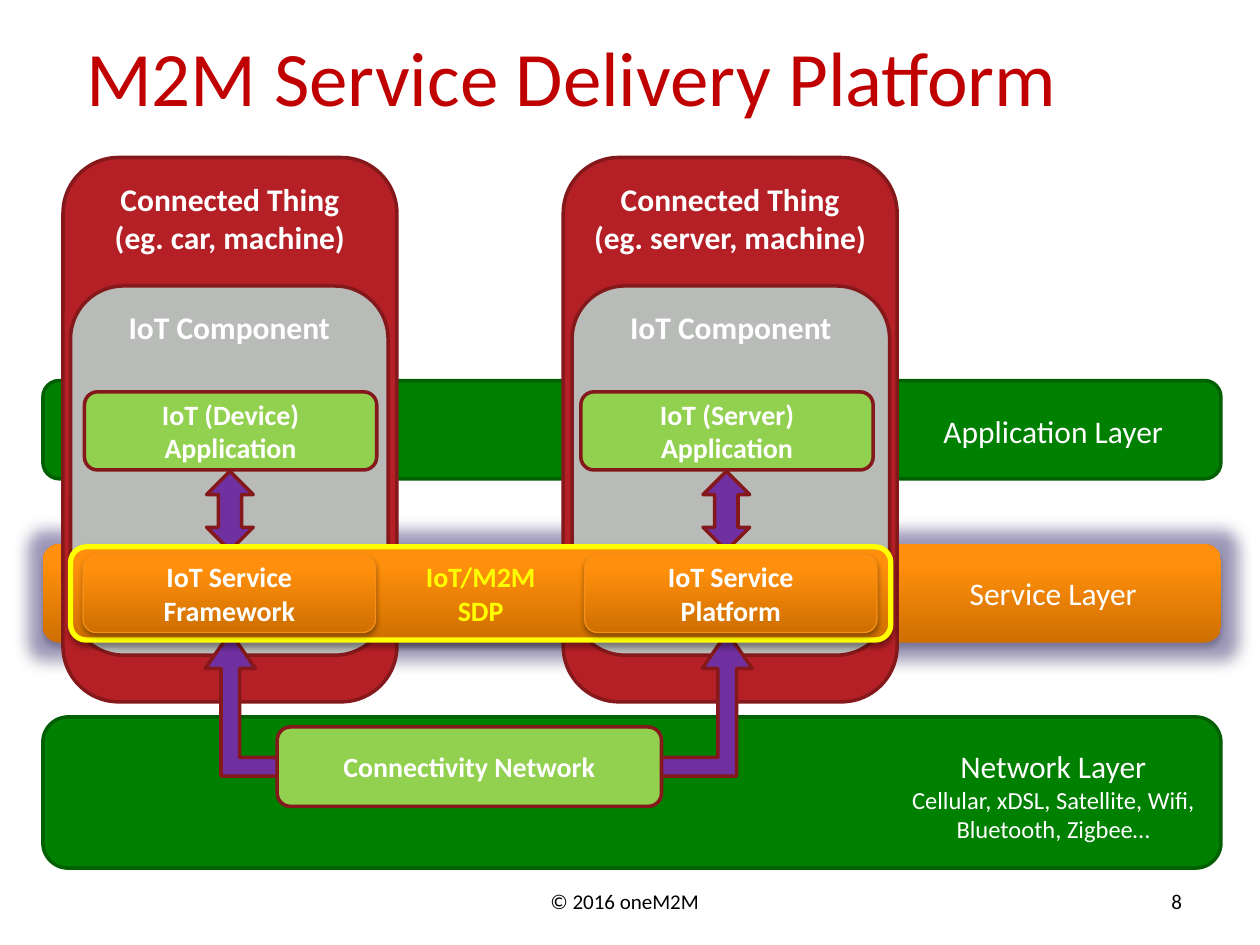
from dataclasses import dataclass

from lxml import etree
from pptx import Presentation
from pptx.dml.color import RGBColor
from pptx.enum.shapes import MSO_SHAPE
from pptx.enum.text import MSO_ANCHOR, PP_ALIGN
from pptx.oxml import parse_xml
from pptx.oxml.ns import nsdecls
from pptx.util import Inches, Pt

ROUNDED = MSO_SHAPE.ROUNDED_RECTANGLE
UP_DOWN = MSO_SHAPE.UP_DOWN_ARROW
BENT_UP = MSO_SHAPE.BENT_UP_ARROW
TOP, MIDDLE = MSO_ANCHOR.TOP, MSO_ANCHOR.MIDDLE
CENTER, LEFT, RIGHT = PP_ALIGN.CENTER, PP_ALIGN.LEFT, PP_ALIGN.RIGHT


@dataclass(frozen=True)
class Theme:
    font: str = "Calibri"
    title: str = "C00000"
    black: str = "000000"
    white: str = "FFFFFF"
    yellow: str = "FFFF00"
    layer: str = "008000"
    layer_edge: str = "005F00"
    thing: str = "B42025"
    edge: str = "85181B"
    component: str = "B8BBB8"
    application: str = "92D050"
    arrow: str = "7030A0"
    orange_dark: str = "CE6F00"
    orange: str = "FF8F0C"
    orange_edge: str = "F68F18"
    glow: str = "3F3080"
    title_size: int = 44
    large: int = 18
    medium: int = 16
    small: int = 14
    footer: int = 12


theme = Theme()


def write(shape, text, size, color=theme.white, bold=False, align=CENTER, anchor=TOP):
    frame = shape.text_frame
    frame.word_wrap = True
    frame.vertical_anchor = anchor
    para = frame.paragraphs[0]
    para.text = text
    para.alignment = align
    para.font.name = theme.font
    para.font.size = Pt(size)
    para.font.bold = bold
    para.font.color.rgb = RGBColor.from_string(color)
    return para


def add_block(kind, left, top, width, height, fill, edge=None, weight=2, glow=False):
    """Add a shape; without a plain fill it gets the orange gradient and a shadow."""
    shape = page.shapes.add_shape(
        kind, Inches(left), Inches(top), Inches(width), Inches(height))
    shape.shadow.inherit = False
    if edge:
        shape.line.color.rgb = RGBColor.from_string(edge)
        shape.line.width = Pt(weight)
    else:
        shape.line.fill.background()
    if fill:
        shape.fill.solid()
        shape.fill.fore_color.rgb = RGBColor.from_string(fill)
        return shape
    shape.fill.gradient()
    shape.fill.gradient_angle = 90
    stops = zip(shape.fill.gradient_stops, (0, 0.8), (theme.orange_dark, theme.orange))
    for stop, position, color in stops:
        stop.position = position
        stop.color.rgb = RGBColor.from_string(color)
    effects = shape._element.spPr.find("{*}effectLst")
    if glow:
        effects.append(parse_xml(
            f'<a:glow {nsdecls("a")} rad="{Pt(18)}"><a:srgbClr val="{theme.glow}">'
            '<a:alpha val="40000"/></a:srgbClr></a:glow>'))
    shadow = etree.SubElement(
        effects, effects.tag.replace("effectLst", "outerShdw"),
        blurRad=str(Pt(3.1)), dist=str(Pt(1.8)), dir="5400000", rotWithShape="0")
    shadow.append(parse_xml(
        f'<a:srgbClr {nsdecls("a")} val="{theme.black}"><a:alpha val="35000"/></a:srgbClr>'))
    return shape


deck = Presentation()
deck.slide_width, deck.slide_height = Inches(10), Inches(7.5)
page = deck.slides.add_slide(deck.slide_layouts[5])

title = page.shapes.title
title.left, title.top = Inches(0.5), Inches(0.3)
title.width, title.height = Inches(8.08), Inches(1.25)
write(title, "M2M Service Delivery Platform", theme.title_size, theme.title).line_spacing = 0.85

# Horizontal layers
add_block(ROUNDED, 0.34, 5.69, 9.35, 1.2, theme.layer, theme.layer_edge)
add_block(ROUNDED, 0.34, 4.32, 9.35, 0.78, None, glow=True)
add_block(ROUNDED, 0.34, 3.02, 9.35, 0.78, theme.layer, theme.layer_edge)

# Connected things: lefts of thing, component, application, arrow and bent arrow
columns = [
    (0.5, 0.56, 0.67, 1.64, 1.63, "car", "Device"),
    (4.47, 4.54, 4.61, 5.58, 4.62, "server", "Server"),
]
for thing_x, component_x, application_x, arrow_x, bent_x, example, role in columns:
    thing = add_block(ROUNDED, thing_x, 1.25, 2.65, 4.32, theme.thing, theme.edge)
    thing.text_frame.margin_left = thing.text_frame.margin_right = Inches(0.08)
    write(thing, f"Connected Thing\n(eg. {example}, machine)", theme.large, bold=True)
    component = add_block(ROUNDED, component_x, 2.27, 2.52, 2.93, theme.component, theme.edge)
    write(component, "IoT Component", theme.large, bold=True)
    application = add_block(ROUNDED, application_x, 3.11, 2.32, 0.62,
                            theme.application, theme.edge)
    write(application, f"IoT ({role})\nApplication", theme.medium, bold=True, anchor=MIDDLE)
    add_block(UP_DOWN, arrow_x, 3.74, 0.37, 0.63, theme.arrow, theme.edge)
    bent_arrow = add_block(BENT_UP, bent_x, 5.02, 1.35, 1.14, theme.arrow, theme.edge)
    for index, value in enumerate((0.13, 0.174, 0.25)):
        bent_arrow.adjustments[index] = value
    if role == "Device":
        bent_arrow._element.spPr.xfrm.set("flipH", "1")

network = add_block(ROUNDED, 2.2, 5.77, 3.05, 0.63, theme.application, theme.edge)
write(network, "Connectivity Network", theme.medium, bold=True, anchor=MIDDLE)

# Service delivery platform
platform = add_block(ROUNDED, 0.56, 4.34, 6.51, 0.74, None, theme.yellow, 3)
write(platform, "IoT/M2M\nSDP", theme.medium, theme.yellow, bold=True, anchor=MIDDLE)
for left, name in ((0.66, "Framework"), (4.64, "Platform")):
    service = add_block(ROUNDED, left, 4.4, 2.32, 0.62, None, theme.orange_edge, 0.75)
    write(service, f"IoT Service\n{name}", theme.medium, bold=True, anchor=MIDDLE)

# Layer names and footer
labels = [
    (7.28, 3.22, 2.16, 0.4, "Application Layer", theme.large, theme.white, CENTER),
    (7.28, 4.51, 2.16, 0.4, "Service Layer", theme.large, theme.white, CENTER),
    (7.07, 5.88, 2.58, 0.88, "Network Layer", theme.large, theme.white, CENTER),
    (4.27, 7, 1.4, 0.3, "© 2016 oneM2M", theme.footer, theme.black, LEFT),
    (9.08, 7, 0.4, 0.3, "8", theme.footer, theme.black, RIGHT),
]
for left, top, width, height, text, size, color, align in labels:
    box = page.shapes.add_textbox(Inches(left), Inches(top), Inches(width), Inches(height))
    para = write(box, text, size, color, align=align)
    if text == "Network Layer":
        para.add_line_break()
        span = para.add_run()
        span.text = "Cellular, xDSL, Satellite, Wifi, Bluetooth, Zigbee…"
        span.font.size = Pt(theme.small)

deck.save("out.pptx")
